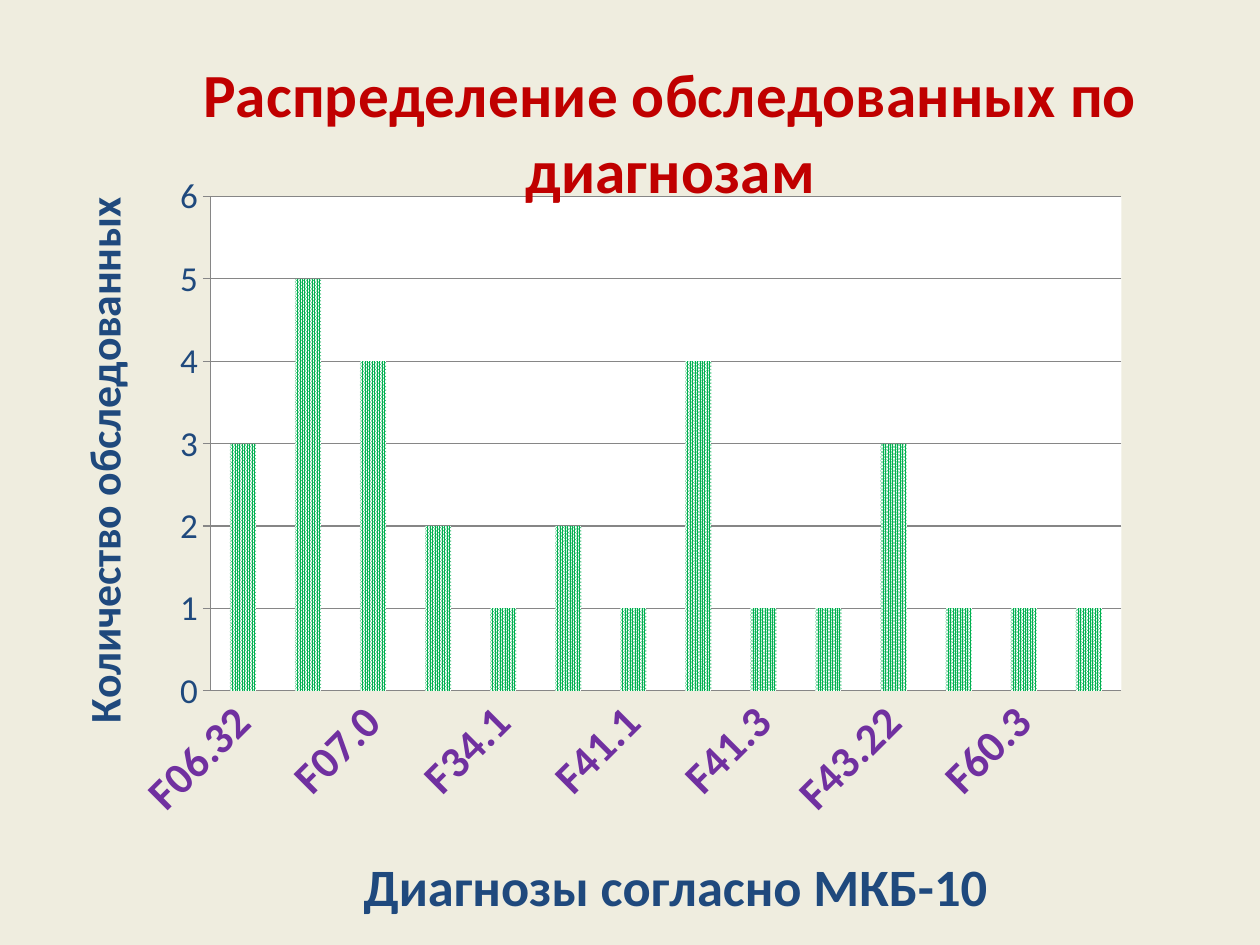
from lxml.etree import SubElement
from pptx import Presentation
from pptx.chart.data import CategoryChartData
from pptx.dml.color import RGBColor
from pptx.enum.chart import XL_CHART_TYPE, XL_TICK_MARK
from pptx.enum.dml import MSO_PATTERN
from pptx.oxml import parse_xml
from pptx.oxml.ns import nsdecls, qn
from pptx.util import Cm, Pt

HUES = {
    "back": "EEECE1",
    "title": "C00000",
    "text": "1F497D",
    "code": "7030A0",
    "bar": "00B050",
    "plot": "FFFFFF",
    "frame": "FFFFCC",
    "line": "868686",
}

COUNTS = {
    "F06.32": 3, "F06.4": 5, "F07.0": 4, "F33.1": 2, "F34.1": 1,
    "F40.8": 2, "F41.1": 1, "F41.2": 4, "F41.3": 1, "F43.21": 1,
    "F43.22": 3, "F43.25": 1, "F60.3": 1, "F62.8": 1,
}


def hue(name):
    return RGBColor.from_string(HUES[name])


def apply(item, values):
    for name, value in values.items():
        setattr(item, name, value)


def style(font, size, tone, bold=False):
    apply(font, {"name": "Calibri", "size": Pt(size), "bold": bold})
    font.color.rgb = hue(tone)


def place(node, modes, shares):
    layout = node.find(qn("c:layout"))
    if layout is None:
        layout = parse_xml(f"<c:layout {nsdecls('c')}/>")
        node.insert(0, layout)
    manual = SubElement(layout, qn("c:manualLayout"))
    values = modes | {name: f"{share / 100:.4f}" for name, share in shares.items()}
    for name, value in values.items():
        SubElement(manual, qn(f"c:{name}")).set("val", value)


def label(title, text, size, tone, left, top):
    frame = title.text_frame
    frame.text = text
    style(frame.paragraphs[0].runs[0].font, size, tone, True)
    node = title._element
    place(node, {"xMode": "edge", "yMode": "edge"}, {"x": left, "y": top})
    node.find(qn("c:overlay")).set("val", "1")
    return frame


def paint(tone, alpha=100):
    return parse_xml(
        f"<c:spPr {nsdecls('c', 'a')}><a:solidFill>"
        f'<a:srgbClr val="{HUES[tone]}"><a:alpha val="{alpha * 1000}"/></a:srgbClr>'
        "</a:solidFill><a:ln><a:noFill/></a:ln></c:spPr>"
    )


def rule(line):
    line.color.rgb = hue("line")
    line.width = Pt(0.75)


def draw_axes(chart):
    codes, scale = chart.category_axis, chart.value_axis
    apply(codes, {"major_tick_mark": XL_TICK_MARK.NONE,
                  "minor_tick_mark": XL_TICK_MARK.NONE,
                  "has_major_gridlines": False})
    apply(scale, {"major_tick_mark": XL_TICK_MARK.OUTSIDE,
                  "minor_tick_mark": XL_TICK_MARK.NONE,
                  "has_major_gridlines": True,
                  "minimum_scale": 0, "maximum_scale": 6, "major_unit": 1})
    for line in (codes.format.line, scale.format.line, scale.major_gridlines.format.line):
        rule(line)
    style(codes.tick_labels.font, 25.2, "code", True)
    style(scale.tick_labels.font, 20, "text")
    codes._element.find(qn("c:txPr")).find(qn("a:bodyPr")).set("rot", "-2700000")
    label(codes.axis_title, "Диагнозы согласно МКБ-10", 30, "text", 28.1, 89)
    side = label(scale.axis_title, "Количество обследованных", 25, "text", 5.3, 20.1)
    side._txBody.find(qn("a:bodyPr")).set("rot", "-5400000")


def draw_chart(slide, left, top, width, height):
    data = CategoryChartData()
    data.categories = list(COUNTS)
    data.add_series("Series 1", list(COUNTS.values()))
    chart = slide.shapes.add_chart(
        XL_CHART_TYPE.COLUMN_CLUSTERED, left, top, width, height, data
    ).chart
    apply(chart, {"has_legend": False, "has_title": True})
    style(chart.font, 20, "text")
    label(chart.chart_title, "Распределение обследованных по диагнозам",
          35, "title", 15.25, 4.25)
    draw_axes(chart)

    plot = chart.plots[0]
    apply(plot, {"gap_width": 150, "vary_by_categories": False})
    bars = plot.series[0]
    bars.invert_if_negative = False
    fill = bars.format.fill
    fill.patterned()
    fill.pattern = MSO_PATTERN.PERCENT_90
    fill.fore_color.rgb = hue("bar")
    fill.back_color.rgb = hue("plot")
    bars.format.line.fill.background()

    root = chart._chartSpace.find(qn("c:chart"))
    area = root.find(qn("c:plotArea"))
    place(area, {"layoutTarget": "inner", "xMode": "edge", "yMode": "edge"},
          {"x": 16.7, "y": 20.8, "w": 72.3, "h": 52.3})
    area.append(paint("plot"))
    root.addnext(paint("frame", 6))


def main():
    deck = Presentation()
    apply(deck, {"slide_width": Cm(25.4), "slide_height": Cm(19.05)})
    slide = deck.slides.add_slide(deck.slide_layouts[6])
    back = slide.background.fill
    back.solid()
    back.fore_color.rgb = hue("back")
    draw_chart(slide, Cm(0), Cm(0), deck.slide_width, deck.slide_height)
    deck.save("out.pptx")


if __name__ == "__main__":
    main()
